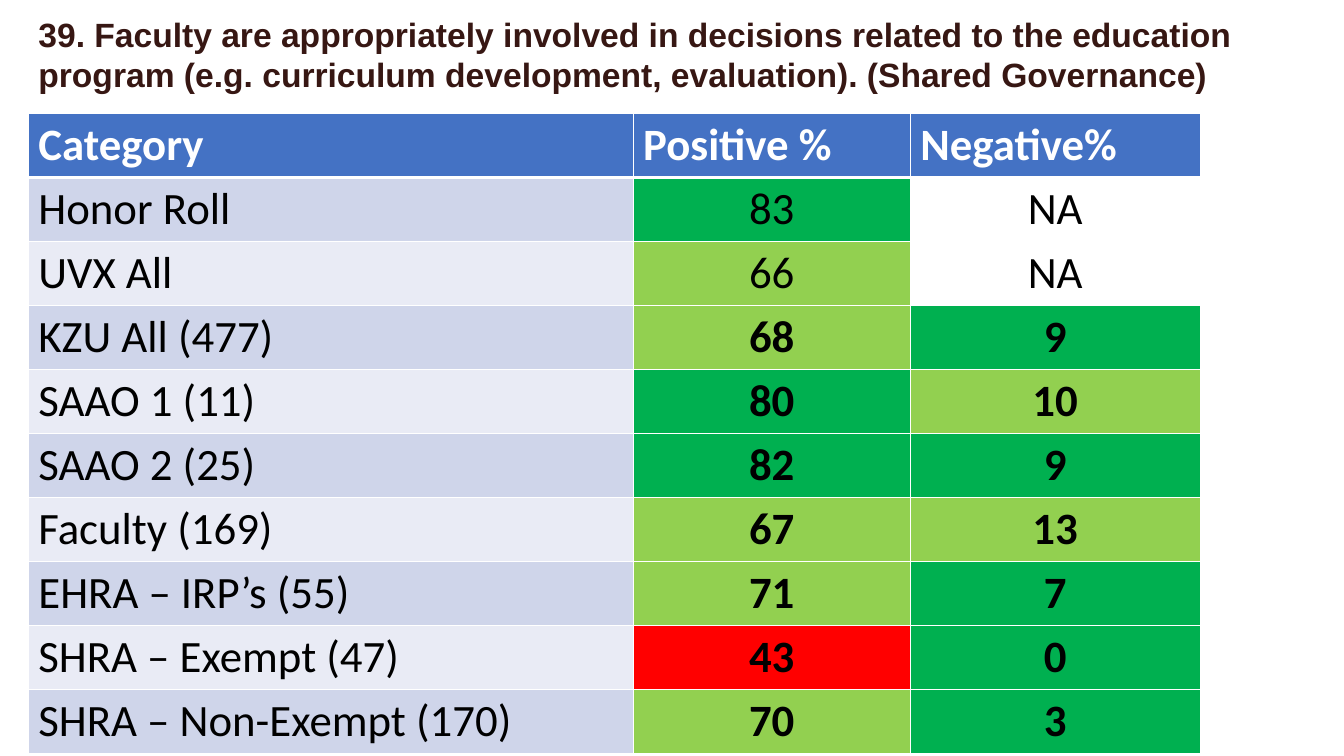
from dataclasses import dataclass

from lxml import etree
from pptx import Presentation
from pptx.dml.color import RGBColor
from pptx.enum.text import MSO_ANCHOR, MSO_AUTO_SIZE, PP_ALIGN
from pptx.util import Pt

TOP = MSO_ANCHOR.TOP
NO_FIT = MSO_AUTO_SIZE.NONE
LEFT, CENTER = PP_ALIGN.LEFT, PP_ALIGN.CENTER
PX = 9525
NS = "http://schemas.openxmlformats.org/drawingml/2006/main"


@dataclass(frozen=True)
class Theme:
    title: str = "371713"
    head: str = "4472C4"
    odd: str = "CFD5EA"
    even: str = "E9EBF5"
    good: str = "00B050"
    fair: str = "92D050"
    poor: str = "FF0000"
    white: str = "FFFFFF"
    black: str = "000000"
    title_font: str = "Arial"
    table_font: str = "Calibri"
    title_size: int = 24
    table_size: int = 32
    thin: int = 1
    thick: int = 3


THEME = Theme()
TITLE = (
    "39. Faculty are appropriately involved in decisions related to the education "
    "program (e.g. curriculum development, evaluation). (Shared Governance)"
)
HEADS = ("Category", "Positive %", "Negative%")
SCORES = (
    ("Honor Roll", 83, None),
    ("UVX All", 66, None),
    ("KZU All (477)", 68, 9),
    ("SAAO 1 (11)", 80, 10),
    ("SAAO 2 (25)", 82, 9),
    ("Faculty (169)", 67, 13),
    ("EHRA – IRP’s (55)", 71, 7),
    ("SHRA – Exempt (47)", 43, 0),
    ("SHRA – Non-Exempt (170)", 70, 3),
)
WIDTHS = (576, 264, 276)
ROW = 61
PAD = 4


def px(*sizes):
    return [size * PX for size in sizes]


def add_run(para, text, font, size, color, bold):
    run = para.add_run()
    run.text = text
    run.font.name = font
    run.font.size = Pt(size)
    run.font.bold = bold
    run.font.color.rgb = RGBColor.from_string(color)


def add_title(slide, box):
    shape = slide.shapes.title
    shape.left, shape.top, shape.width, shape.height = px(*box)
    frame = shape.text_frame
    frame.word_wrap = True
    frame.auto_size = NO_FIT
    frame.vertical_anchor = TOP
    para = frame.paragraphs[0]
    para.alignment = LEFT
    add_run(para, TITLE, THEME.title_font, THEME.title_size, THEME.title, True)


def add_edges(cell, row):
    props = cell._tc.get_or_add_tcPr()
    for side in "LRTB":
        heavy = (row, side) in ((0, "B"), (1, "T"))
        width = THEME.thick if heavy else THEME.thin
        line = etree.SubElement(props, f"{{{NS}}}ln{side}", w=str(Pt(width)))
        fill = etree.SubElement(line, f"{{{NS}}}solidFill")
        etree.SubElement(fill, f"{{{NS}}}srgbClr", val=THEME.white)


def add_cell(cell, row, text, fill, color, bold, align):
    add_edges(cell, row)
    cell.margin_top, cell.margin_bottom = px(PAD, PAD)
    if fill:
        cell.fill.solid()
        cell.fill.fore_color.rgb = RGBColor.from_string(fill)
    else:
        cell.fill.background()
    para = cell.text_frame.paragraphs[0]
    para.alignment = align
    add_run(para, text, THEME.table_font, THEME.table_size, color, bold)


def rate_plus(score):
    if score >= 80:
        return THEME.good
    return THEME.fair if score >= 60 else THEME.poor


def rate_minus(score):
    if score is None:
        return None
    return THEME.good if score < 10 else THEME.fair


def add_scores(slide, box):
    count = len(SCORES) + 1
    table = slide.shapes.add_table(count, len(HEADS), *px(*box)).table
    for col, width in zip(table.columns, px(*WIDTHS)):
        col.width = width
    for row in table.rows:
        row.height = ROW * PX
    for col, head in enumerate(HEADS):
        add_cell(table.cell(0, col), 0, head, THEME.head, THEME.white, True, LEFT)
    for row, (name, plus, minus) in enumerate(SCORES, 1):
        band = THEME.odd if row % 2 else THEME.even
        bold = minus is not None
        parts = (
            (name, band, False, LEFT),
            (str(plus), rate_plus(plus), bold, CENTER),
            (str(minus) if bold else "NA", rate_minus(minus), bold, CENTER),
        )
        for col, (text, fill, strong, align) in enumerate(parts):
            add_cell(table.cell(row, col), row, text, fill, THEME.black, strong, align)


def main():
    deck = Presentation()
    deck.slide_width, deck.slide_height = px(1280, 720)
    slide = deck.slides.add_slide(deck.slide_layouts[5])
    add_scores(slide, (27, 108, sum(WIDTHS), ROW * (len(SCORES) + 1)))
    add_title(slide, (27, 8, 1182, 87))
    deck.save("out.pptx")


if __name__ == "__main__":
    main()
